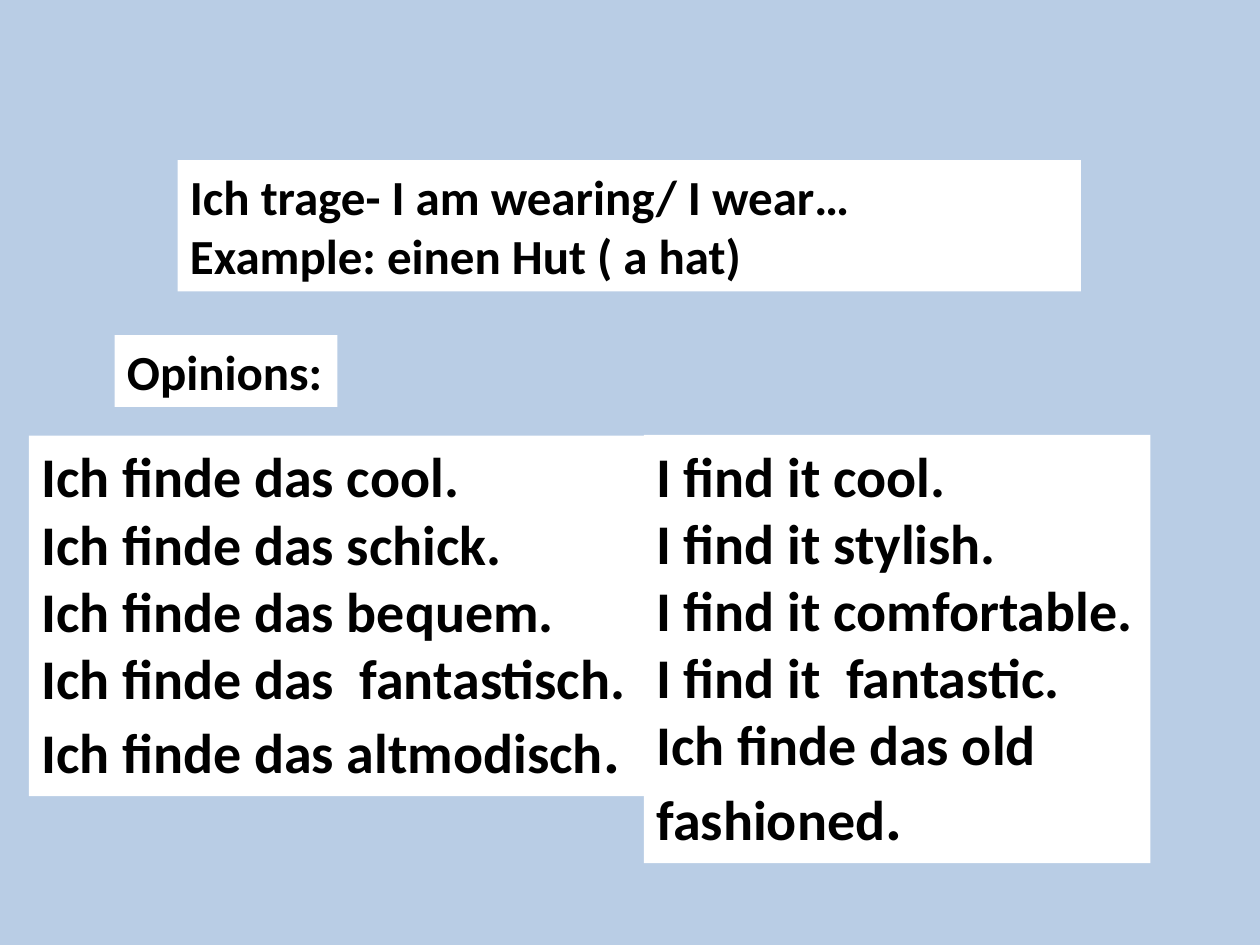
from pptx import Presentation
from pptx.dml.color import RGBColor
from pptx.enum.text import MSO_AUTO_SIZE
from pptx.util import Pt

GROW = MSO_AUTO_SIZE.SHAPE_TO_FIT_TEXT
FONT = "Calibri"
BACKGROUND, PANEL, INK = "B9CDE5", "FFFFFF", "000000"
FULL_STOP_SIZE = 36

# (left, top, width, height), font size, wraps, lines, larger closing mark
PANELS = [
    ((101.5, 91.5, 516.25, 75), 28, True,
     ["Ich trage- I am wearing/ I wear…", "Example: einen Hut ( a hat)"], ""),
    ((65.5, 191.5, 127.4, 41), 28, False, ["Opinions:"], ""),
    ((16.5, 249, 351.4, 206), 32, False,
     ["Ich finde das cool.", "Ich finde das schick.", "Ich finde das bequem.",
      "Ich finde das  fantastisch.", "Ich finde das altmodisch"], "."),
    ((368, 248.5, 289.4, 244.8), 32, False,
     ["I find it cool.", "I find it stylish.", "I find it comfortable.",
      "I find it  fantastic.", "Ich finde das old", "fashioned"], "."),
]


def color(hex_string):
    return RGBColor.from_string(hex_string)


def add_panel(s, box, size, wraps, lines, closing_mark):
    sp = s.shapes.add_textbox(*(Pt(v) for v in box))
    sp.fill.solid()
    sp.fill.fore_color.rgb = color(PANEL)
    tf = sp.text_frame
    tf.word_wrap = wraps
    tf.auto_size = GROW
    for i, line in enumerate(lines):
        p = tf.add_paragraph() if i else tf.paragraphs[0]
        p.add_run().text = line
        p.font.name = FONT
        p.font.size = Pt(size)
        p.font.bold = True
        p.font.color.rgb = color(INK)
    if closing_mark:
        r = p.add_run()
        r.text = closing_mark
        r.font.size = Pt(FULL_STOP_SIZE)


def main():
    prs = Presentation()
    prs.slide_width, prs.slide_height = Pt(720), Pt(540)
    s = prs.slides.add_slide(prs.slide_layouts[6])
    s.background.fill.solid()
    s.background.fill.fore_color.rgb = color(BACKGROUND)
    for panel in PANELS:
        add_panel(s, *panel)
    prs.save("out.pptx")


if __name__ == "__main__":
    main()
